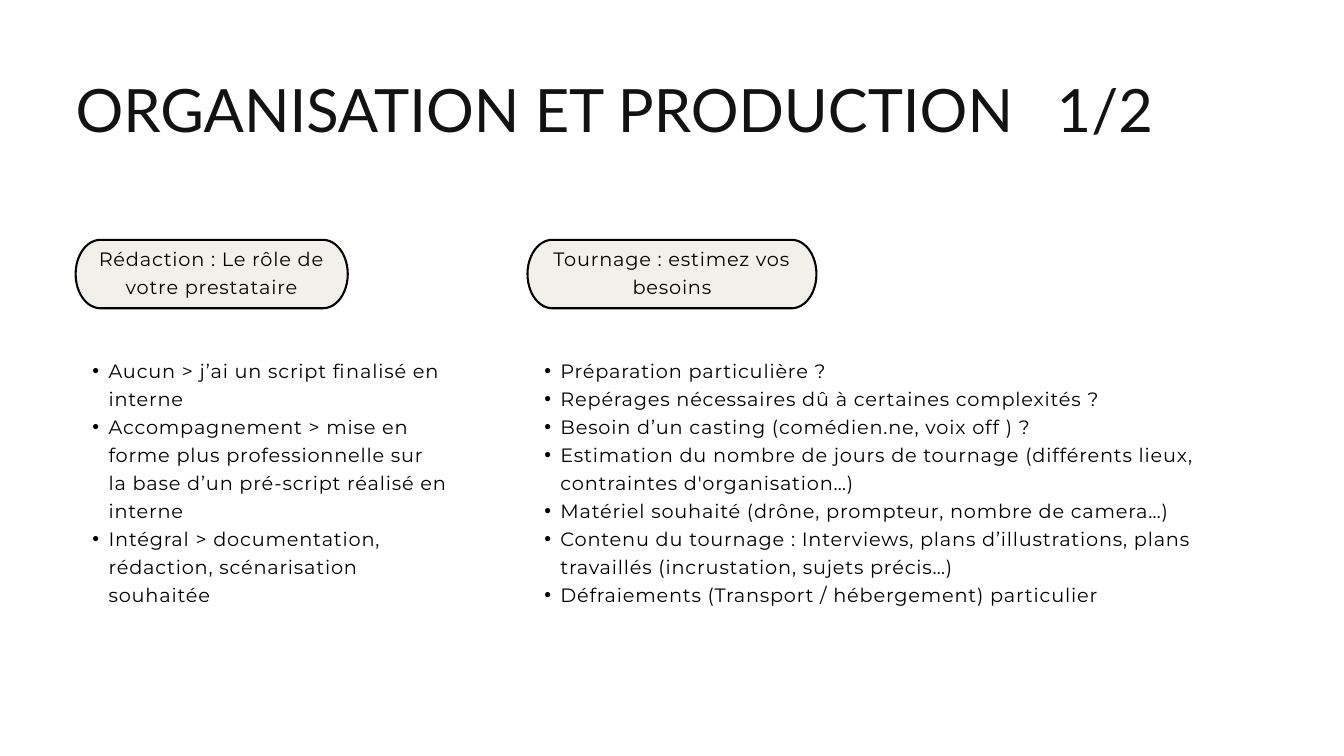
from math import cos, pi, sin

from lxml import etree
from pptx import Presentation
from pptx.dml.color import RGBColor
from pptx.enum.text import MSO_ANCHOR, MSO_AUTO_SIZE, PP_ALIGN
from pptx.oxml.ns import qn
from pptx.util import Inches, Pt

INK = RGBColor(0x12, 0x12, 0x12)
BLACK = RGBColor(0, 0, 0)
CREAM = RGBColor(0xF1, 0xF0, 0xEA)

LEFT, CENTER = PP_ALIGN.LEFT, PP_ALIGN.CENTER
TOP, MIDDLE = MSO_ANCHOR.TOP, MSO_ANCHOR.MIDDLE
NO_FIT = MSO_AUTO_SIZE.NONE

# Grid of 160 columns by 90 rows
UNIT = Inches(0.125)
TWO_LISTS = 3  # layout with a title and two bodies

PARTS = [
    # column, pill width, list width, heading, items
    (9, 32.4, 44.3, "Rédaction : Le rôle de votre prestataire", [
        "Aucun > j’ai un script finalisé en interne",
        "Accompagnement > mise en forme plus professionnelle sur la "
        "base d’un pré-script réalisé en interne",
        "Intégral > documentation, rédaction, scénarisation souhaitée",
    ]),
    (62.8, 34.4, 89.9, "Tournage : estimez vos besoins", [
        "Préparation particulière ?",
        "Repérages nécessaires dû à certaines complexités ?",
        "Besoin d’un casting (comédien.ne, voix off ) ?",
        "Estimation du nombre de jours de tournage (différents lieux, "
        "contraintes d'organisation…)",
        "Matériel souhaité (drône, prompteur, nombre de camera…)",
        "Contenu du tournage : Interviews, plans d’illustrations, plans "
        "travaillés (incrustation, sujets précis…)",
        "Défraiements (Transport / hébergement) particulier",
    ]),
]


class Deck:
    head_font, text_font = "Lato", "Montserrat"
    head_size, text_size = Pt(64), Pt(20.7)
    lead, track = Pt(30), 90

    def __init__(self):
        self.prs = Presentation()
        self.prs.slide_width = 160 * UNIT
        self.prs.slide_height = 90 * UNIT
        self.slide = self.prs.slides.add_slide(self.prs.slide_layouts[TWO_LISTS])

    def place(self, idx, col, row, wide, high):
        """Move a placeholder onto the grid and return its text frame."""
        box = self.slide.placeholders[idx]
        box.left, box.top, box.width, box.height = (
            round(n * UNIT) for n in (col, row, wide, high))
        frame = box.text_frame
        frame.margin_left = frame.margin_right = 0
        frame.margin_top = frame.margin_bottom = 0
        frame.vertical_anchor = TOP
        frame.auto_size = NO_FIT
        frame.word_wrap = True
        return frame

    def style(self, para, name, size, color, lead, align):
        para.alignment = align
        para.line_spacing = lead
        para.space_before = Pt(0)
        font = para.font
        font.name, font.size = name, size
        font.color.rgb = color

    def body(self, para, align):
        self.style(para, self.text_font, self.text_size, BLACK, self.lead, align)
        para._p.pPr.find(qn("a:defRPr")).set("spc", str(self.track))

    def title(self, text, tab, *spot):
        para = self.place(0, *spot).paragraphs[0]
        para.text = text
        tabs = etree.SubElement(para._p.get_or_add_pPr(), qn("a:tabLst"))
        etree.SubElement(tabs, qn("a:tab"), pos=str(round(tab * UNIT)), algn="l")
        self.style(para, self.head_font, self.head_size, INK, self.head_size, LEFT)

    def list(self, idx, items, *spot):
        frame = self.place(idx, *spot)
        frame.text = "\n".join(items)
        for para in frame.paragraphs:
            props = para._p.get_or_add_pPr()
            props.set("marL", str(Inches(0.49)))
            props.set("indent", str(-Inches(0.24)))
            etree.SubElement(props, qn("a:buFont"), typeface="Arial")
            etree.SubElement(props, qn("a:buChar"), char="•")
            self.body(para, LEFT)

    def pill(self, text, col, row, wide, high, cap=2.95, steps=24):
        """Draw a bar whose two ends are half ellipses, with its heading."""
        mid = row + high / 2
        points = []
        for hub, start in ((col + wide - cap, -pi / 2), (col + cap, pi / 2)):
            for i in range(steps + 1):
                turn = start + pi * i / steps
                points.append((round((hub + cap * cos(turn)) * UNIT),
                               round((mid + high / 2 * sin(turn)) * UNIT)))
        path = self.slide.shapes.build_freeform(*points[0], scale=1.0)
        path.add_line_segments(points[1:], close=True)
        shape = path.convert_to_shape()
        shape.shadow.inherit = False
        shape.fill.solid()
        shape.fill.fore_color.rgb = CREAM
        shape.line.color.rgb = BLACK
        shape.line.width = Pt(2.25)
        frame = shape.text_frame
        frame.word_wrap = True
        frame.vertical_anchor = MIDDLE
        frame.margin_left = frame.margin_right = Inches(0.06)
        frame.margin_top, frame.margin_bottom = 0, Inches(0.1)
        para = frame.paragraphs[0]
        para.text = text
        self.body(para, CENTER)


def main():
    deck = Deck()
    # Title, with the page count at a tab stop
    deck.title("ORGANISATION ET PRODUCTION\t1/2", 116.8, 9, 10.1, 142, 7.5)
    # Two parts: heading pill above its list
    for idx, (col, wide, span, head, items) in enumerate(PARTS, 1):
        deck.pill(head, col, 28.55, wide, 8.15)
        deck.list(idx, items, col, 42.2, span, 33.2)
    deck.prs.save("out.pptx")


if __name__ == "__main__":
    main()
